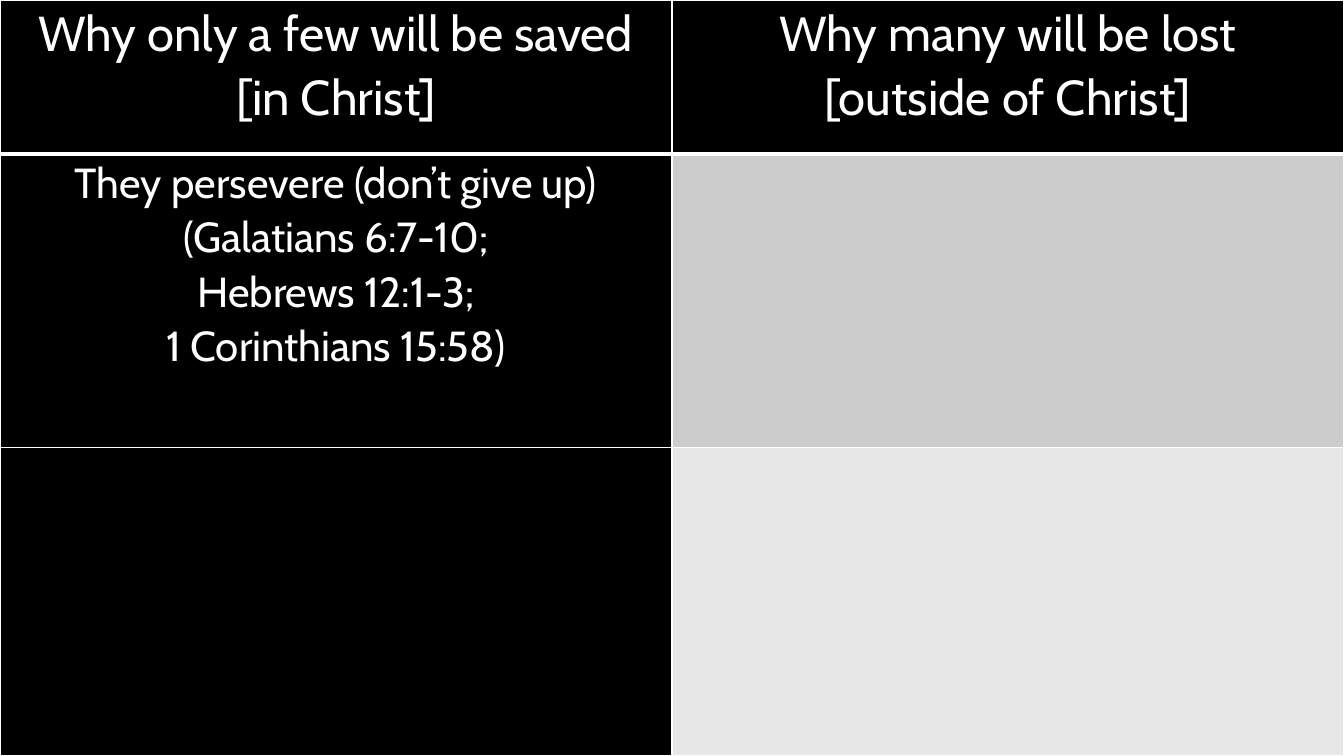
from lxml.etree import SubElement
from pptx import Presentation
from pptx.dml.color import RGBColor
from pptx.enum.text import PP_ALIGN
from pptx.oxml.ns import qn
from pptx.util import Pt

BLACK = RGBColor(0x00, 0x00, 0x00)
WHITE = RGBColor(0xFF, 0xFF, 0xFF)
GRAY = RGBColor(0xCC, 0xCC, 0xCC)
PALE_GRAY = RGBColor(0xE7, 0xE7, 0xE7)

SLIDE_WIDTH, SLIDE_HEIGHT = 960, 540
FONT = "Cabin"
THIN, THICK = 1, 3

REASONS = [
    {"height": 110, "size": 35, "cells": [
        (["Why only a few will be saved", "[in Christ]"], BLACK),
        (["Why many will be lost", "[outside of Christ]"], BLACK),
    ]},
    {"height": 209.5, "size": 30, "cells": [
        (["They persevere (don’t give up)", "(Galatians 6:7-10;",
          "Hebrews 12:1-3;", "1 Corinthians 15:58)"], BLACK),
        ([], GRAY),
    ]},
    {"height": 220.5, "size": 30, "cells": [
        ([], BLACK),
        ([], PALE_GRAY),
    ]},
]


def draw_borders(cell, widths):
    properties = cell._tc.get_or_add_tcPr()
    for side, width in widths.items():
        border = SubElement(properties, qn(f"a:ln{side}"), w=str(Pt(width)))
        paint = SubElement(border, qn("a:solidFill"))
        SubElement(paint, qn("a:srgbClr"), val=str(WHITE))


def write_lines(cell, lines, size):
    for number, line in enumerate(lines):
        frame = cell.text_frame
        paragraph = frame.add_paragraph() if number else frame.paragraphs[0]
        paragraph.alignment = PP_ALIGN.CENTER
        paragraph.line_spacing = 1.07
        run = paragraph.add_run()
        run.text = line
        run.font.name = FONT
        run.font.size = Pt(size)
        run.font.bold = False
        run.font.color.rgb = WHITE


def main():
    deck = Presentation()
    deck.slide_width, deck.slide_height = Pt(SLIDE_WIDTH), Pt(SLIDE_HEIGHT)
    slide = deck.slides.add_slide(deck.slide_layouts[6])
    slide.background.fill.solid()
    slide.background.fill.fore_color.rgb = BLACK

    comparison = slide.shapes.add_table(
        len(REASONS), 2, 0, 0, Pt(SLIDE_WIDTH), Pt(SLIDE_HEIGHT)).table
    for column in comparison.columns:
        column.width = Pt(SLIDE_WIDTH / 2)

    for row, reason in enumerate(REASONS):
        comparison.rows[row].height = Pt(reason["height"])
        top = THICK if row == 1 else THIN
        bottom = THICK if row == 0 else THIN
        for col, (lines, color) in enumerate(reason["cells"]):
            cell = comparison.cell(row, col)
            cell.margin_left = cell.margin_right = Pt(5)
            cell.margin_top = cell.margin_bottom = 0
            draw_borders(cell, {"L": THIN, "R": THIN, "T": top, "B": bottom})
            cell.fill.solid()
            cell.fill.fore_color.rgb = color
            write_lines(cell, lines, reason["size"])

    deck.save("out.pptx")


if __name__ == "__main__":
    main()
